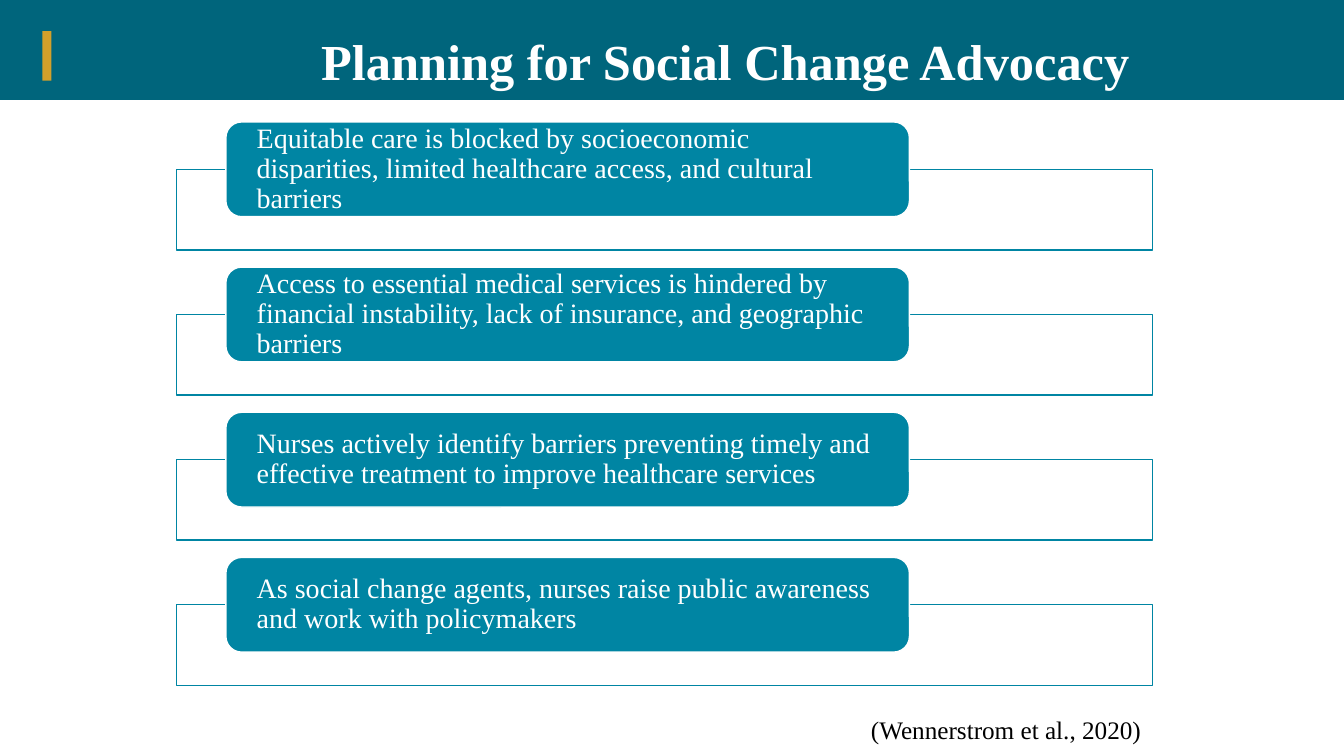
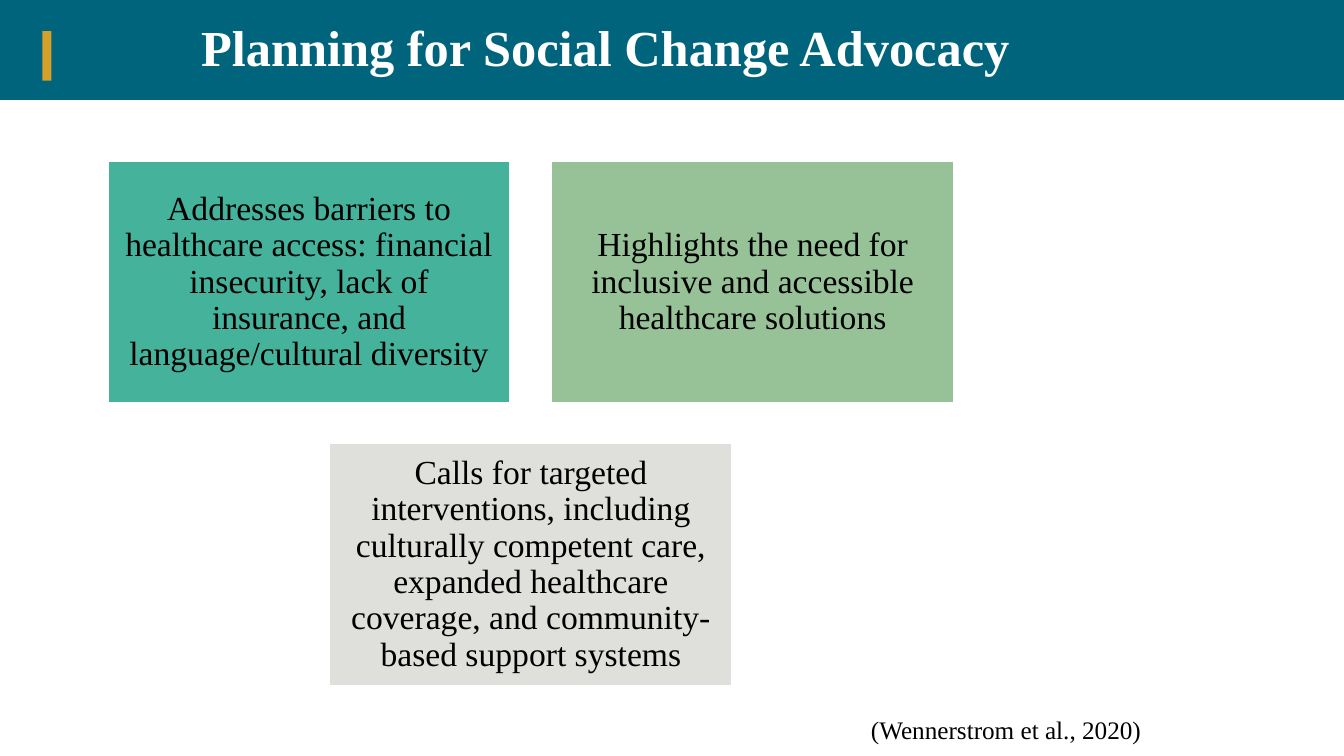
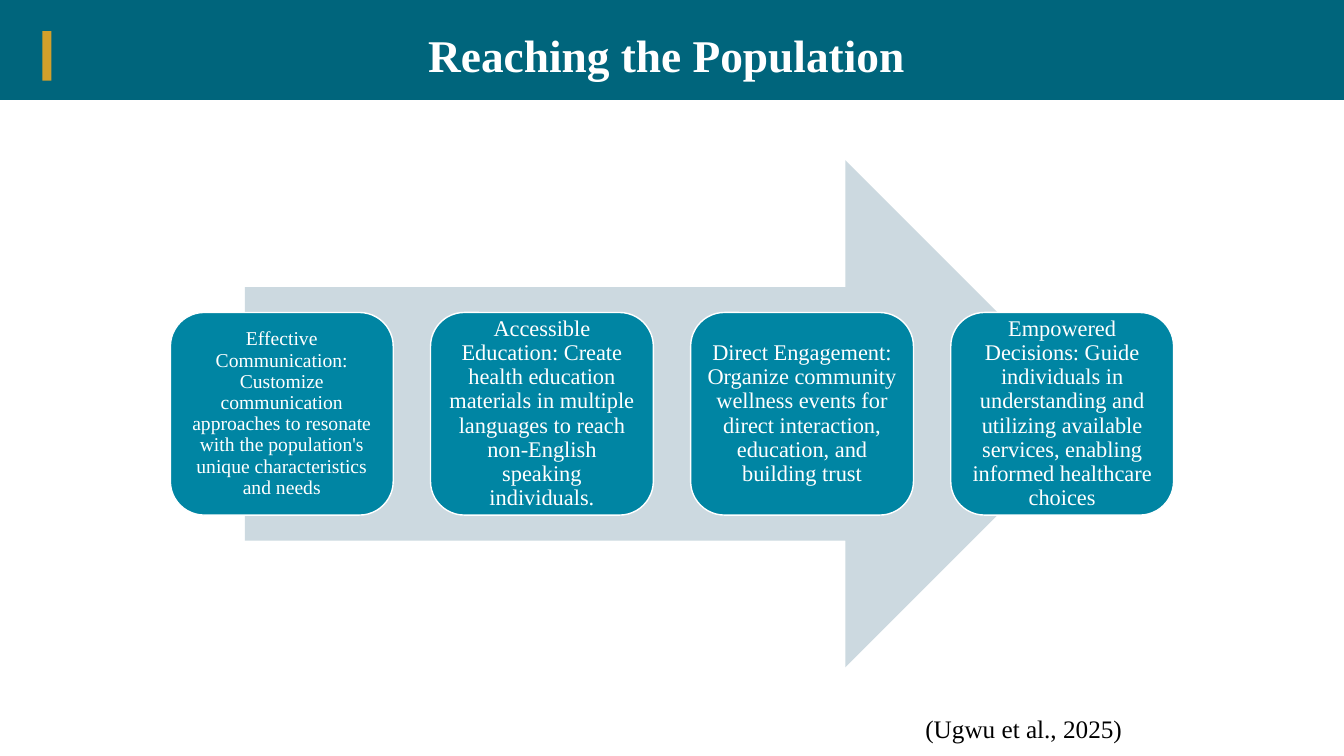
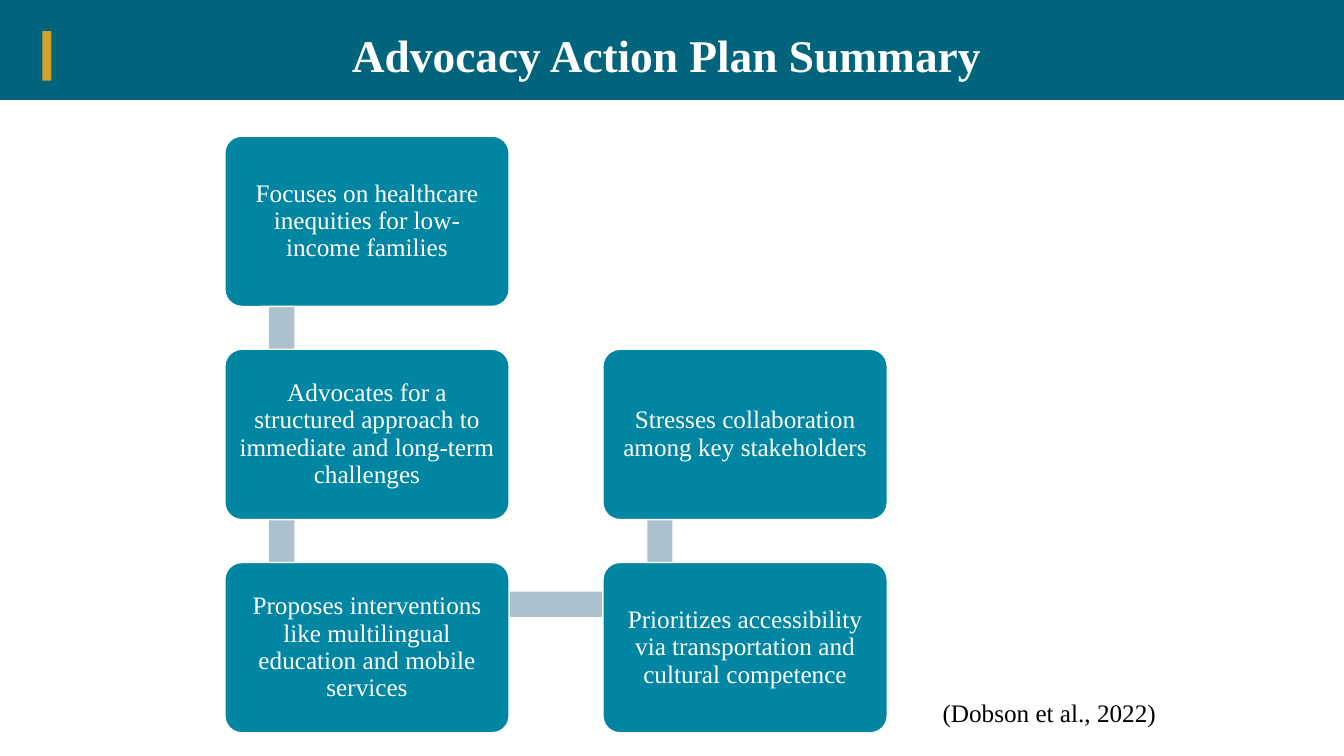
from pptx import Presentation
from pptx.dml.color import RGBColor
from pptx.enum.shapes import MSO_SHAPE
from pptx.enum.text import MSO_ANCHOR, MSO_AUTO_SIZE, PP_ALIGN
from pptx.util import Inches, Pt

RECT = MSO_SHAPE.RECTANGLE
ROUNDED = MSO_SHAPE.ROUNDED_RECTANGLE
RIGHT_ARROW = MSO_SHAPE.RIGHT_ARROW
MIDDLE, BOTTOM = MSO_ANCHOR.MIDDLE, MSO_ANCHOR.BOTTOM
LEFT, CENTER = PP_ALIGN.LEFT, PP_ALIGN.CENTER
GROW = MSO_AUTO_SIZE.SHAPE_TO_FIT_TEXT

FONT = "Times New Roman"
COLORS = {
    "band": "00657C",
    "accent": "D3A02A",
    "card": "0085A3",
    "arrow": "CCD9E0",
    "link": "ABC2CE",
    "green": "45B29C",
    "sage": "97C297",
    "grey": "DFE0DB",
    "white": "FFFFFF",
    "black": "000000",
}


def rgb(name):
    return RGBColor.from_string(COLORS[name])


def add_block(slide, box, fill, line=None, preset=RECT):
    """Draw a preset shape; box is left, top, width, height in inches."""
    block = slide.shapes.add_shape(preset, *map(Inches, box))
    block.shadow.inherit = False
    block.fill.solid()
    block.fill.fore_color.rgb = rgb(fill)
    if line:
        block.line.color.rgb = rgb(line)
        block.line.width = Pt(1)
    else:
        block.line.fill.background()
    return block


def write(frame, text, size, color, align=LEFT, bold=False, spacing=None):
    frame.word_wrap = True
    paragraph = frame.paragraphs[0]
    paragraph.text = text
    paragraph.alignment = align
    paragraph.line_spacing = spacing
    paragraph.font.name = FONT
    paragraph.font.size = Pt(size)
    paragraph.font.bold = bold
    paragraph.font.color.rgb = rgb(color)


def add_card(slide, box, text, size, fill="card", color="white", preset=ROUNDED,
             align=CENTER, insets=(0.07, 0.07), corner=None):
    """Draw a white-edged box with text; insets are horizontal, vertical."""
    card = add_block(slide, box, fill, "white", preset)
    if corner is not None:
        card.adjustments[0] = corner
    frame = card.text_frame
    frame.vertical_anchor = MIDDLE
    frame.margin_left = frame.margin_right = Inches(insets[0])
    frame.margin_top = frame.margin_bottom = Inches(insets[1])
    write(frame, text, size, color, align, spacing=0.9)


def add_slide(prs, title, title_box, title_size, citation, citation_box):
    """Add a slide with the shared band, accent, title and citation."""
    slide = prs.slides.add_slide(prs.slide_layouts[6])
    add_block(slide, (0, 0, 13.33, 0.99), "band")
    add_block(slide, (0.42, 0.31, 0.09, 0.49), "accent")

    heading = slide.shapes.add_textbox(*map(Inches, title_box)).text_frame
    heading.vertical_anchor = BOTTOM
    write(heading, title, title_size, "white", CENTER, bold=True, spacing=0.9)

    source = slide.shapes.add_textbox(*map(Inches, citation_box)).text_frame
    write(source, citation, 18, "black")
    source.auto_size = GROW
    return slide


def add_barrier_list(slide, statements):
    for row, statement in enumerate(statements):
        top = 1.21 + row * 1.44
        add_block(slide, (1.75, top + 0.47, 9.68, 0.8), "white", "card")
        add_card(slide, (2.24, top, 6.78, 0.94), statement, 20,
                 align=LEFT, insets=(0.26, 0))


def add_tiles(slide, tiles):
    """Place tiles by column and row; a half column centres a tile."""
    for column, row, fill, text in tiles:
        box = (1.07 + column * 4.4, 1.6 + row * 2.8, 3.99, 2.4)
        add_card(slide, box, text, 24, fill, "black", RECT, insets=(0.1, 0.1))


def add_arrow_process(slide, steps):
    add_block(slide, (2.43, 1.59, 8.47, 5.03), "arrow", preset=RIGHT_ARROW)
    for index, (size, inset, text) in enumerate(steps):
        add_card(slide, (1.69 + index * 2.58, 3.1, 2.21, 2.01), text, size,
                 insets=(inset, inset))


def add_winding_plan(slide, points):
    left, top, column_step, row_step = 2.23, 1.35, 3.75, 2.115
    cells = [(0, 0), (0, 1), (0, 2), (1, 2), (1, 1)]

    # Links lie behind the cards
    for (column, row), (next_column, next_row) in zip(cells, cells[1:]):
        x = left + column * column_step
        y = top + min(row, next_row) * row_step
        if column == next_column:
            add_block(slide, (x + 0.44, y + 0.43, 0.25, 2.1), "link")
        else:
            add_block(slide, (x + 0.58, y + 0.29, 3.74, 0.25), "link")

    for (column, row), point in zip(cells, points):
        box = (left + column * column_step, top + row * row_step, 2.82, 1.69)
        add_card(slide, box, point, 18, corner=0.1)


def main():
    prs = Presentation()
    prs.slide_width, prs.slide_height = Inches(13.33), Inches(7.5)
    planning = "Planning for Social Change Advocacy"
    planning_source = "(Wennerstrom et al., 2020)"
    planning_source_box = (8.54, 7.04, 3.07, 0.4)
    low_title_box = (0.51, 0.24, 12.2, 0.63)

    # Barriers to equitable care
    slide = add_slide(prs, planning, (1.38, -0.05, 11.63, 1.01), 36,
                      planning_source, planning_source_box)
    add_barrier_list(slide, [
        "Equitable care is blocked by socioeconomic disparities, limited "
        "healthcare access, and cultural barriers",
        "Access to essential medical services is hindered by financial "
        "instability, lack of insurance, and geographic barriers",
        "Nurses actively identify barriers preventing timely and effective "
        "treatment to improve healthcare services",
        "As social change agents, nurses raise public awareness and work "
        "with policymakers",
    ])

    # Needs and interventions
    slide = add_slide(prs, planning, (0, -0.47, 12.01, 1.29), 36,
                      planning_source, planning_source_box)
    add_tiles(slide, [
        (0, 0, "green", "Addresses barriers to healthcare access: financial "
         "insecurity, lack of insurance, and language/cultural diversity"),
        (1, 0, "sage", "Highlights the need for inclusive and accessible "
         "healthcare solutions"),
        (0.5, 1, "grey", "Calls for targeted interventions, including "
         "culturally competent care, expanded healthcare coverage, and "
         "community-based support systems"),
    ])

    # Reaching the population
    slide = add_slide(prs, "Reaching the Population", low_title_box, 32.4,
                      "(Ugwu et al., 2025)", (9.08, 7.03, 2.4, 0.4))
    add_arrow_process(slide, [
        (14, 0.06, "Effective Communication: Customize communication "
         "approaches to resonate with the population's unique "
         "characteristics and needs"),
        (16, 0.07, "Accessible Education: Create health education materials "
         "in multiple languages to reach non-English speaking individuals."),
        (16, 0.07, "Direct Engagement: Organize community wellness events "
         "for direct interaction, education, and building trust"),
        (16, 0.07, "Empowered Decisions: Guide individuals in understanding "
         "and utilizing available services, enabling informed healthcare "
         "choices"),
    ])

    # Action plan summary
    slide = add_slide(prs, "Advocacy Action Plan Summary", low_title_box, 32.4,
                      "(Dobson et al., 2022)", (9.25, 6.87, 2.46, 0.4))
    add_winding_plan(slide, [
        "Focuses on healthcare inequities for low-income families",
        "Advocates for a structured approach to immediate and long-term "
        "challenges",
        "Proposes interventions like multilingual education and mobile "
        "services",
        "Prioritizes accessibility via transportation and cultural competence",
        "Stresses collaboration among key stakeholders",
    ])

    prs.save("out.pptx")


if __name__ == "__main__":
    main()
